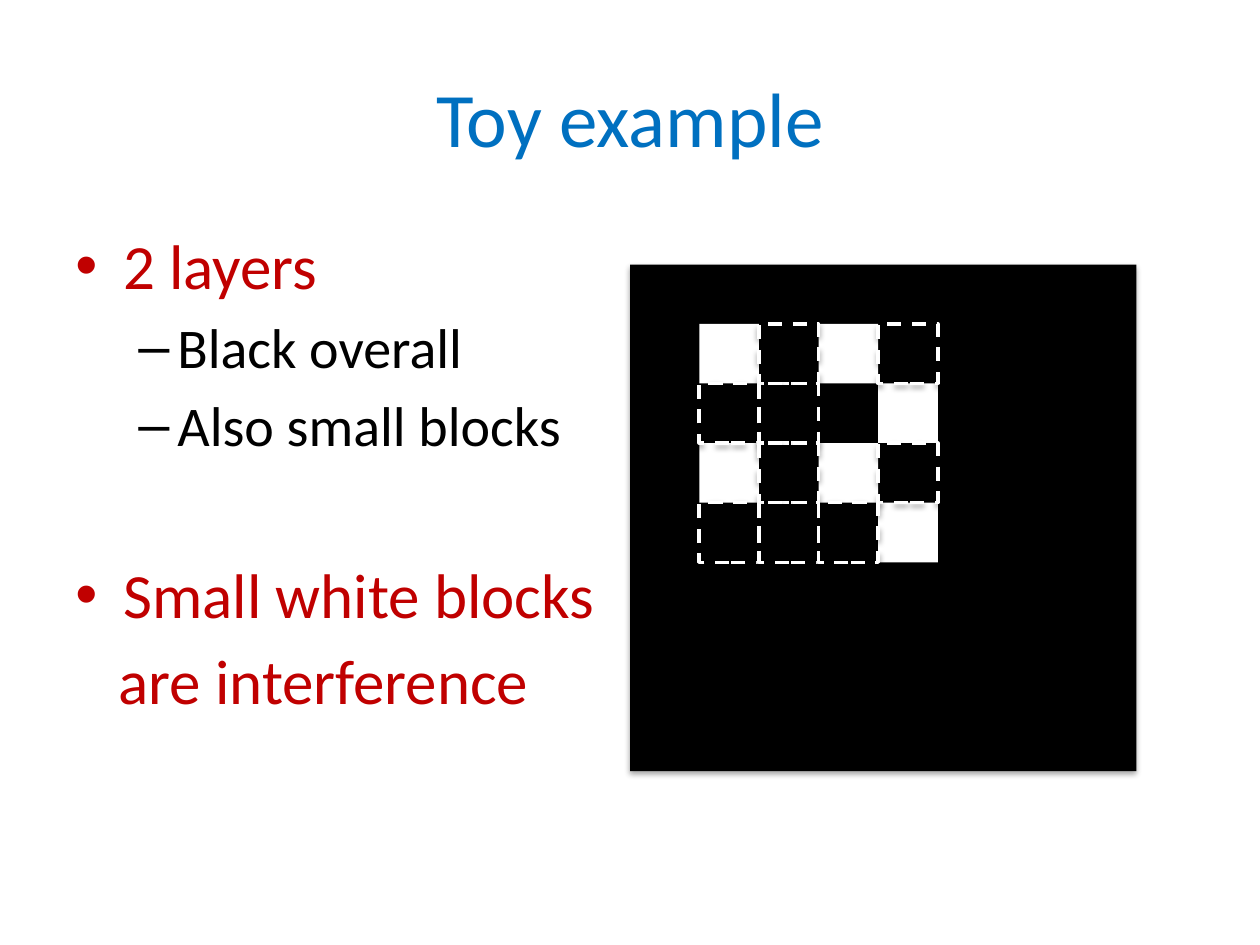
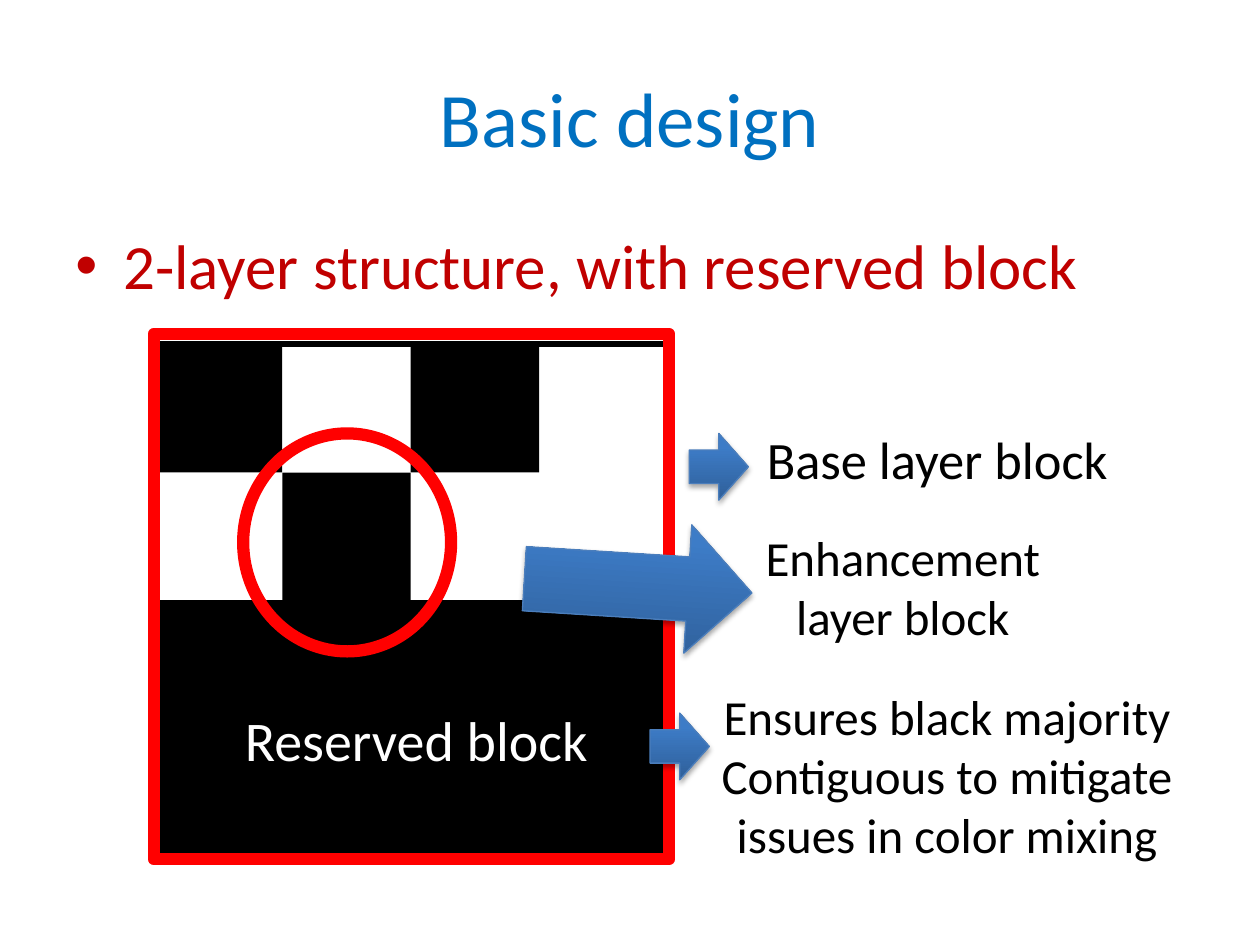
from lxml.etree import SubElement
from pptx import Presentation
from pptx.dml.color import RGBColor
from pptx.enum.dml import MSO_LINE
from pptx.enum.shapes import MSO_SHAPE
from pptx.enum.text import MSO_ANCHOR, PP_ALIGN
from pptx.oxml import parse_xml
from pptx.oxml.ns import nsdecls, qn
from pptx.util import Inches, Pt

FONT = "Calibri"
COLORS = {
    "title": "0070C0",
    "point": "C00000",
    "black": "000000",
    "white": "FFFFFF",
    "red": "FF0000",
    "arrow_edge": "4B7EBC",
    "arrow_dark": "2F5F99",
    "arrow_mid": "3D7CC7",
    "arrow_light": "3A7CCB",
}
LAYER_CELLS = ["#:#:", "::.#", "#:#:", ":::#"]
LAYER_CELL = 1.42 / 3
DESIGN_CELL = 1.02
DESIGN_LEFT, DESIGN_TOP, DESIGN_WIDTH = 1.22, 2.73, 4.09
BLACK_CELLS = [(0, 2), (1, 1), (0, 0)]


def color(name):
    return RGBColor.from_string(COLORS[name])


def set_font(paragraph, size, color_name):
    paragraph.font.name = FONT
    paragraph.font.size = Pt(size)
    paragraph.font.color.rgb = color(color_name)


def add_bullet(paragraph, mark, color_name, margin, hanging):
    properties = paragraph._p.get_or_add_pPr()
    properties.set("marL", str(Inches(margin)))
    properties.set("indent", str(-Inches(hanging)))
    if mark:
        bullet_color = SubElement(properties, qn("a:buClr"))
        SubElement(bullet_color, qn("a:srgbClr"), val=COLORS[color_name])
        SubElement(properties, qn("a:buFont"), typeface="Arial")
        SubElement(properties, qn("a:buChar"), char=mark)


def add_text_frame(page, left, top, width, height):
    box = page.shapes.add_textbox(*map(Inches, (left, top, width, height)))
    box.text_frame.word_wrap = True
    return box.text_frame


def add_label(page, place, lines, size, color_name="black"):
    frame = add_text_frame(page, *place)
    frame.text = "\n".join(lines)
    for paragraph in frame.paragraphs:
        paragraph.alignment = PP_ALIGN.CENTER
        set_font(paragraph, size, color_name)
    return frame


def add_points(page, height, points):
    frame = add_text_frame(page, 0.5, 1.75, 9, height)
    styles = {
        "point": ("•", "point", 0.38, 0.38, 36),
        "detail": ("–", "black", 0.81, 0.31, 32),
        "continued": (None, "point", 0.34, 0, 36),
    }
    for index, (style, text, gap) in enumerate(points):
        mark, color_name, margin, hanging, size = styles[style]
        paragraph = frame.add_paragraph() if index else frame.paragraphs[0]
        paragraph.text = text
        add_bullet(paragraph, mark, color_name, margin, hanging)
        paragraph.space_before = Pt(gap)
        set_font(paragraph, size, color_name)


def add_shadow(shape):
    effects = shape._element.spPr.find(qn("a:effectLst"))
    shadow = SubElement(effects, qn("a:outerShdw"), blurRad=str(Pt(3.1)),
                        dist=str(Pt(1.8)), dir="5400000", rotWithShape="0")
    shade = SubElement(shadow, qn("a:srgbClr"), val=COLORS["black"])
    SubElement(shade, qn("a:alpha"), val="35000")


def add_figure(shapes, kind, place, fill=None, line=None, width=0.75, shadow=False):
    shape = shapes.add_shape(kind, *map(Inches, place))
    shape.shadow.inherit = False
    if fill:
        shape.fill.solid()
        shape.fill.fore_color.rgb = color(fill)
    else:
        shape.fill.background()
    if line:
        shape.line.color.rgb = color(line)
        shape.line.width = Pt(width)
    else:
        shape.line.fill.background()
    if shadow:
        add_shadow(shape)
    return shape


def add_arrow(page, place, rotation=0):
    arrow = add_figure(page.shapes, MSO_SHAPE.RIGHT_ARROW, place,
                       line="arrow_edge", shadow=True)
    arrow.rotation = rotation
    stops = [(0, "arrow_dark"), (80, "arrow_mid"), (100, "arrow_light")]
    stop_xml = "".join(
        f'<a:gs pos="{share * 1000}"><a:srgbClr val="{COLORS[name]}"/></a:gs>'
        for share, name in stops)
    gradient = parse_xml(
        f'<a:gradFill {nsdecls("a")} rotWithShape="1"><a:gsLst>{stop_xml}</a:gsLst>'
        '<a:lin ang="16200000" scaled="0"/></a:gradFill>')
    properties = arrow._element.spPr
    properties.replace(properties.find(qn("a:noFill")), gradient)


def add_page(deck, title):
    page = deck.slides.add_slide(deck.slide_layouts[6])
    frame = add_label(page, (0.5, 0.3, 9, 1.25), [title], 44, "title")
    frame.vertical_anchor = MSO_ANCHOR.MIDDLE
    return page


def add_layer_grid(page):
    shapes = page.shapes.add_group_shape().shapes
    add_figure(shapes, MSO_SHAPE.RECTANGLE, (5, 2.1, 4.02, 4.02), fill="black", shadow=True)
    for kind in "#:":
        for row, cells in enumerate(LAYER_CELLS):
            for column, cell in enumerate(cells):
                if cell != kind:
                    continue
                place = (5.55 + column * LAYER_CELL, 2.57 + row * LAYER_CELL,
                         LAYER_CELL, LAYER_CELL)
                if kind == "#":
                    add_figure(shapes, MSO_SHAPE.RECTANGLE, place, fill="white", shadow=True)
                else:
                    block = add_figure(shapes, MSO_SHAPE.RECTANGLE, place,
                                       line="white", width=2, shadow=True)
                    block.line.dash_style = MSO_LINE.DASH


def add_design_grid(page):
    shapes = page.shapes.add_group_shape().shapes
    add_figure(shapes, MSO_SHAPE.RECTANGLE,
               (DESIGN_LEFT, DESIGN_TOP, DESIGN_WIDTH, 4.02), line="black", width=3)
    add_figure(shapes, MSO_SHAPE.RECTANGLE,
               (DESIGN_LEFT, DESIGN_TOP + 2 * DESIGN_CELL, DESIGN_WIDTH, 2.05),
               fill="black", line="black")
    for row, column in BLACK_CELLS:
        place = (DESIGN_LEFT + column * DESIGN_CELL, DESIGN_TOP + row * DESIGN_CELL,
                 DESIGN_CELL, DESIGN_CELL)
        add_figure(shapes, MSO_SHAPE.RECTANGLE, place, fill="black")


def build_toy_example(deck):
    page = add_page(deck, "Toy example")
    add_points(page, 4.95, [
        ("point", "2 layers", 6),
        ("detail", "Black overall", 6),
        ("detail", "Also small blocks", 6),
        ("point", "Small white blocks", 56),
        ("continued", "are interference", 6),
    ])
    add_layer_grid(page)


def build_basic_design(deck):
    page = add_page(deck, "Basic design")
    add_points(page, 0.82, [("point", "2-layer structure, with reserved block", 6)])
    add_label(page, (5.71, 4.14, 2.91, 1.04), ["Enhancement layer block"], 28)
    add_label(page, (5.71, 3.34, 3.46, 0.61), ["Base layer block"], 30)
    add_design_grid(page)
    add_figure(page.shapes, MSO_SHAPE.OVAL, (1.93, 3.44, 1.65, 1.73), line="red", width=7)
    add_figure(page.shapes, MSO_SHAPE.RECTANGLE, (DESIGN_LEFT, 2.65, DESIGN_WIDTH, 4.17),
               line="red", width=7)
    add_arrow(page, (5.47, 3.44, 0.47, 0.53))
    add_arrow(page, (4.16, 4.14, 1.81, 1.02), 3.6)
    add_label(page, (1.61, 5.55, 3.39, 0.64), ["Reserved block"], 32, "white")
    add_arrow(page, (5.16, 5.66, 0.47, 0.53))
    add_label(page, (5.47, 5.4, 4.09, 1.51),
              ["Ensures black majority", "Contiguous to mitigate issues in color mixing"], 28)


def main():
    deck = Presentation()
    deck.slide_width = Inches(10)
    deck.slide_height = Inches(7.5)
    build_toy_example(deck)
    build_basic_design(deck)
    deck.save("out.pptx")


if __name__ == "__main__":
    main()
